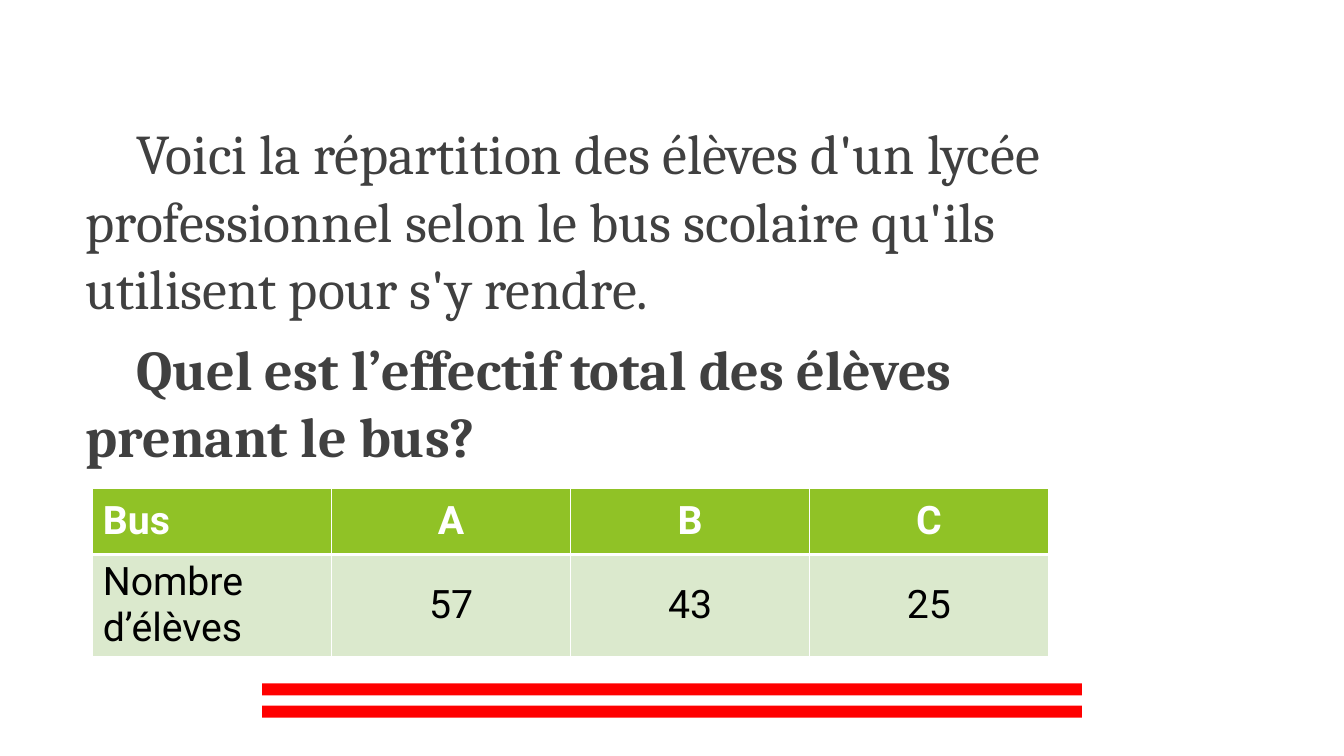
"""Builds the exercise slide about pupils taking the school bus."""
from lxml import etree
from pptx import Presentation
from pptx.dml.color import RGBColor
from pptx.enum.shapes import MSO_SHAPE
from pptx.enum.text import MSO_ANCHOR as ANCHOR, PP_ALIGN as ALIGN
from pptx.oxml.ns import qn
from pptx.util import Inches, Pt

WHITE = RGBColor(0xFF, 0xFF, 0xFF)
BLACK = RGBColor(0, 0, 0)
GREY = RGBColor(0x40, 0x40, 0x40)
RED = RGBColor(0xFF, 0, 0)
GREEN = RGBColor(0x90, 0xC2, 0x26)
PALE_GREEN = RGBColor(0xDB, 0xE9, 0xCD)


class ExerciseSlide:
    """Holds the style and the slide, and adds its elements."""

    text_font, table_font = "Cambria", "Roboto"
    text_size, table_size = Pt(40), Pt(28)

    def __init__(self, deck):
        self.slide = deck.slides.add_slide(deck.slide_layouts[1])
        title = self.slide.shapes.title
        title.element.getparent().remove(title.element)

    def set_font(self, paragraph, name, size, color, bold):
        """Format a whole paragraph."""
        font = paragraph.font
        font.name, font.size, font.bold = name, size, bold
        font.color.rgb = color

    def statement(self, left, top, width, height, paragraphs):
        """Fill the body placeholder with (text, bold) paragraphs."""
        body = self.slide.placeholders[1]
        body.left, body.top = Inches(left), Inches(top)
        body.width, body.height = Inches(width), Inches(height)
        frame = body.text_frame
        frame.word_wrap = True
        frame.vertical_anchor = ANCHOR.TOP
        for index, (text, bold) in enumerate(paragraphs):
            paragraph = frame.add_paragraph() if index else frame.paragraphs[0]
            paragraph.text = text
            paragraph.space_before = Pt(10 if index else 0)
            properties = paragraph._p.get_or_add_pPr()
            properties.set("marL", "0")
            properties.set("indent", str(Inches(0.5)))
            etree.SubElement(properties, qn("a:buNone"))
            self.set_font(paragraph, self.text_font, self.text_size, GREY, bold)

    def bar(self, left, top, width, height):
        """Add a plain red bar."""
        bar = self.slide.shapes.add_shape(
            MSO_SHAPE.RECTANGLE, Inches(left), Inches(top), Inches(width), Inches(height))
        bar.shadow.inherit = False
        bar.fill.solid()
        bar.fill.fore_color.rgb = RED
        bar.line.fill.background()

    def cell_borders(self, cell, bottom):
        """Draw white borders, with the bottom one in the given width."""
        properties = cell._tc.get_or_add_tcPr()
        for position, (side, width) in enumerate(
                {"lnL": 1, "lnR": 1, "lnT": 1, "lnB": bottom}.items()):
            line = etree.Element(qn(f"a:{side}"), w=str(Pt(width)))
            fill = etree.SubElement(line, qn("a:solidFill"))
            etree.SubElement(fill, qn("a:srgbClr"), val=str(WHITE))
            properties.insert(position, line)

    def table(self, left, top, column_width, row_heights, rows):
        """Add a table with a green header row."""
        columns = len(rows[0])
        table = self.slide.shapes.add_table(
            len(rows), columns, Inches(left), Inches(top),
            Inches(column_width * columns), Inches(sum(row_heights))).table
        for column in table.columns:
            column.width = Inches(column_width)
        for r, values in enumerate(rows):
            table.rows[r].height = Inches(row_heights[r])
            header = r == 0
            for c, value in enumerate(values):
                cell = table.cell(r, c)
                cell.text = value
                cell.vertical_anchor = ANCHOR.MIDDLE
                cell.fill.solid()
                cell.fill.fore_color.rgb = GREEN if header else PALE_GREEN
                self.cell_borders(cell, 3 if header else 1)
                paragraph = cell.text_frame.paragraphs[0]
                paragraph.alignment = ALIGN.CENTER if c else ALIGN.LEFT
                self.set_font(paragraph, self.table_font, self.table_size,
                              WHITE if header else BLACK, header)


def main():
    """Build and save the slide."""
    deck = Presentation()
    deck.slide_width, deck.slide_height = Inches(13.33), Inches(7.5)
    exercise = ExerciseSlide(deck)
    exercise.statement(0.75, 1.13, 10.42, 4.65, [
        ("Voici la répartition des élèves d'un lycée professionnel selon "
         "le bus scolaire qu'ils utilisent pour s'y rendre.", False),
        ("Quel est l’effectif total des élèves prenant le bus?", True),
    ])
    for top in (6.78, 7):
        exercise.bar(2.6, top, 8.13, 0.12)
    exercise.table(0.92, 4.85, 2.37, (0.65, 1), [
        ("Bus", "A", "B", "C"),
        ("Nombre d’élèves", "57", "43", "25"),
    ])
    deck.save("out.pptx")


if __name__ == "__main__":
    main()
